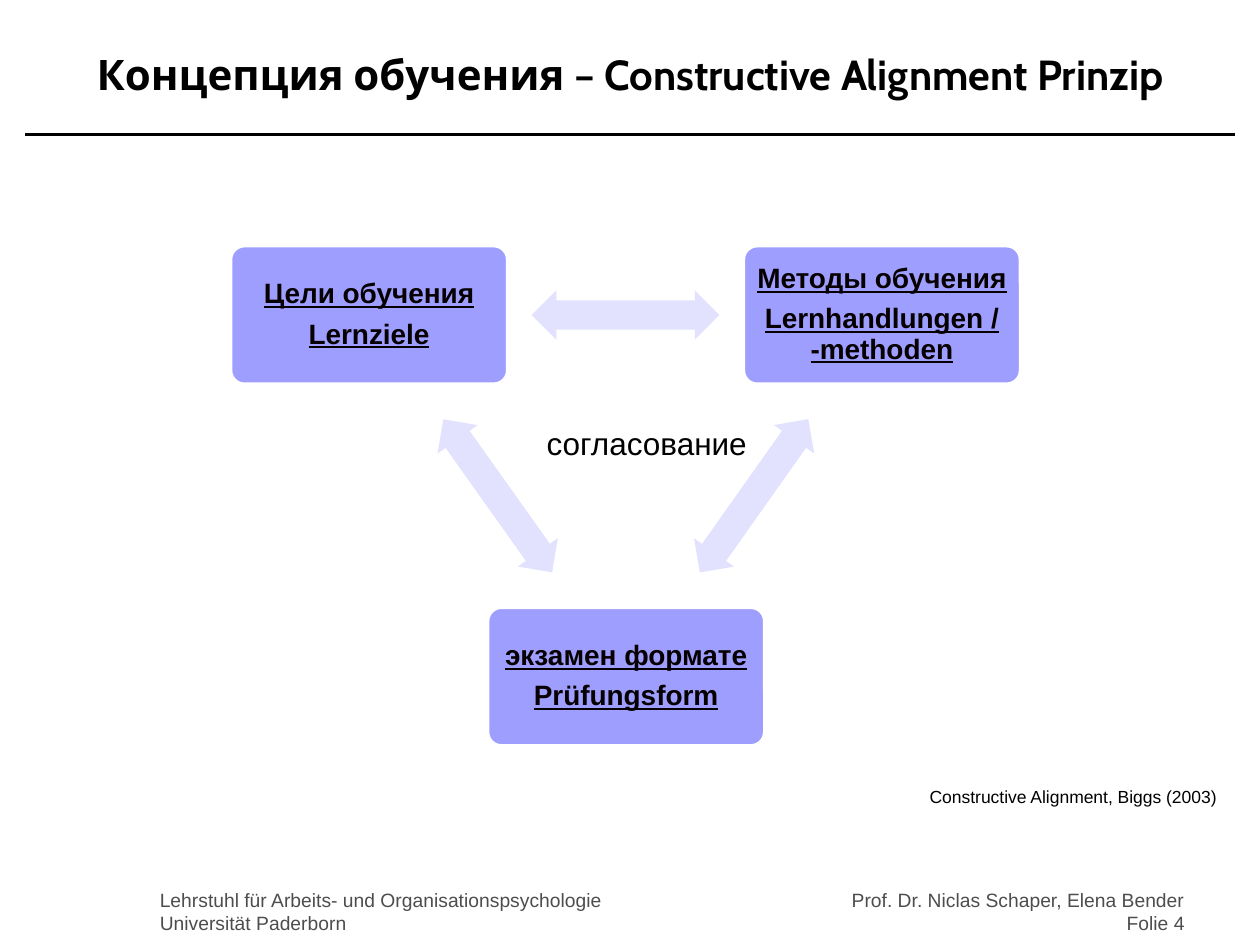
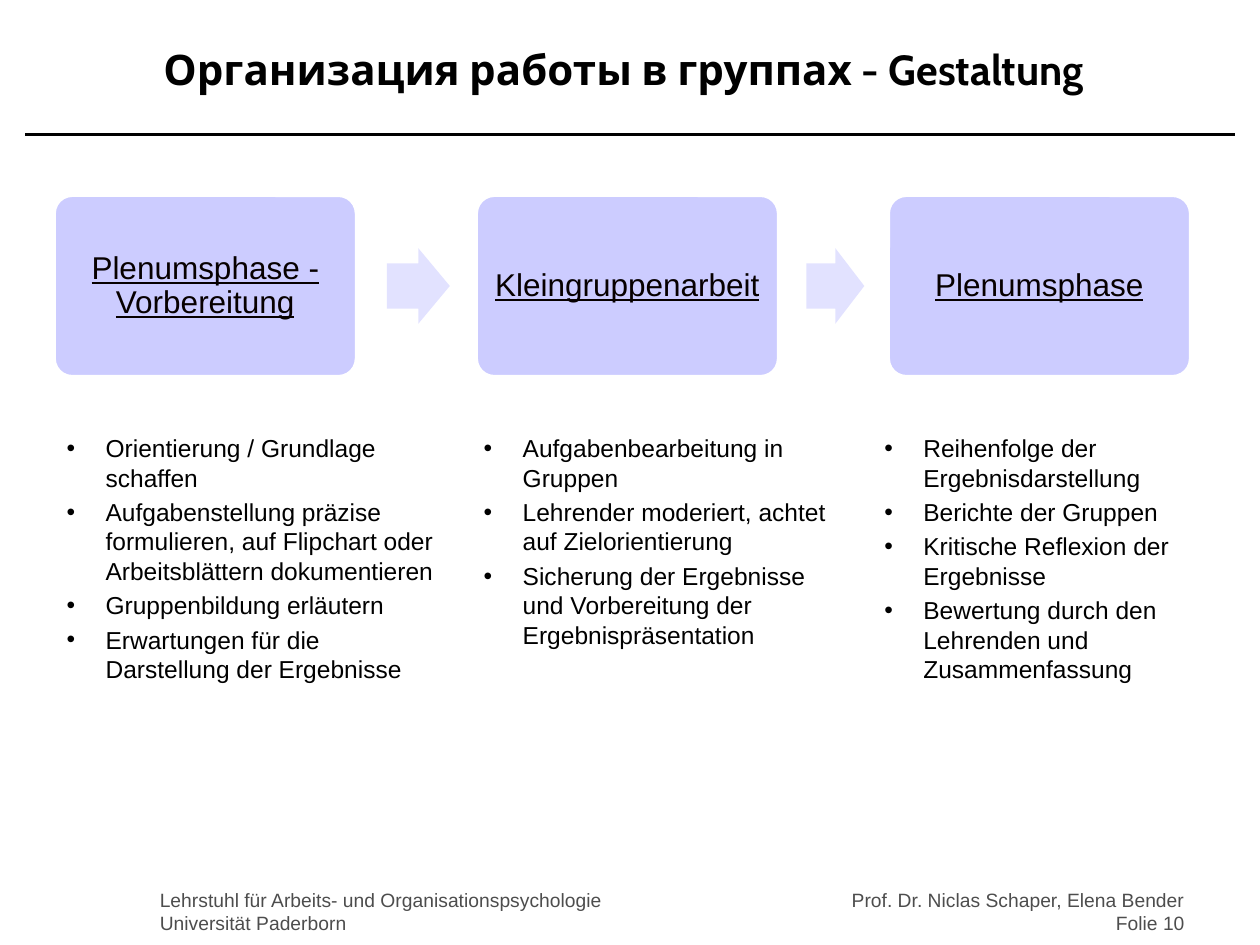
from itertools import combinations
from math import atan2, degrees

from lxml import etree
from pptx import Presentation
from pptx.dml.color import RGBColor
from pptx.enum.shapes import MSO_CONNECTOR, MSO_SHAPE
from pptx.enum.text import MSO_ANCHOR, PP_ALIGN
from pptx.oxml.ns import qn
from pptx.util import Inches, Pt

# Shared look
COLORS = {
    "black": "000000",
    "footer": "4D4D4D",
    "box text": "070000",
    "corner box": "9E9EFF",
    "phase box": "CCCCFF",
    "arrow": "E2E2FF",
    "white": "FFFFFF",
}
BODY_FONT, TITLE_FONT = "Arial", "Cabin"
INSTITUTE = ["Lehrstuhl für Arbeits- und Organisationspsychologie", "Universität Paderborn"]
AUTHORS = "Prof. Dr. Niclas Schaper, Elena Bender"

# Slide 4: three corners of the alignment triangle (left, top, lines)
ALIGNMENT_TITLE = "Концепция обучения – Constructive Alignment Prinzip"
CORNERS = [
    (1.83, 1.95, ["Цели обучения", "Lernziele"]),
    (3.87, 4.82, ["экзамен формате", "Prüfungsform"]),
    (5.9, 1.95, ["Методы обучения", "Lernhandlungen / -methoden"]),
]
CORNER_SIZE = (2.2, 1.1)
LINK_SIZE = (1.49, 0.39)

# Slide 10: phases and their steps
GROUP_TITLE = "Организация работы в группах - Gestaltung"
PHASES = [
    {"name": "Plenumsphase - Vorbereitung", "left": 0.43, "list": (0.43, 3.12),
     "steps": ["Orientierung / Grundlage schaffen",
               "Aufgabenstellung präzise formulieren, auf Flipchart oder "
               "Arbeitsblättern dokumentieren",
               "Gruppenbildung erläutern",
               "Erwartungen für die Darstellung der Ergebnisse"]},
    {"name": "Kleingruppenarbeit", "left": 3.78, "list": (3.74, 2.99),
     "steps": ["Aufgabenbearbeitung in Gruppen",
               "Lehrender moderiert, achtet auf Zielorientierung",
               "Sicherung der Ergebnisse und Vorbereitung der Ergebnispräsentation"]},
    {"name": "Plenumsphase", "left": 7.05, "list": (6.92, 3.05),
     "steps": ["Reihenfolge der Ergebnisdarstellung",
               "Berichte der Gruppen",
               "Kritische Reflexion der Ergebnisse",
               "Bewertung durch den Lehrenden und Zusammenfassung"]},
]
PHASE_TOP, PHASE_SIZE = 1.55, (2.4, 1.44)
PHASE_ARROWS = [(3.07, 0.5), (6.4, 0.46)]  # left, width
PHASE_ARROW_HEIGHT = 0.6
STEPS_TOP, STEPS_HEIGHT, STEP_INDENT = 3.39, 2.13, 0.31


def color(name):
    return RGBColor.from_string(COLORS[name])


def add_bullet(para):
    properties = para._p.get_or_add_pPr()
    properties.set("marL", str(Inches(STEP_INDENT)))
    properties.set("indent", str(-Inches(STEP_INDENT)))
    etree.SubElement(properties, qn("a:buFont")).set("typeface", BODY_FONT)
    etree.SubElement(properties, qn("a:buChar")).set("char", "•")


def write(frame, lines, size, ink="black", font=BODY_FONT, align=PP_ALIGN.LEFT,
          bold=False, underline=False, gap=0, spacing=None, bullets=False):
    """Fill a text frame with one paragraph per line."""
    frame.text = "\n".join(lines)
    for number, para in enumerate(frame.paragraphs):
        para.alignment = align
        if spacing:
            para.line_spacing = spacing
        if number and gap:
            para.space_before = Pt(gap)
        if bullets:
            add_bullet(para)
        for span in para.runs:
            span.font.name = font
            span.font.size = Pt(size)
            span.font.bold = bold
            span.font.underline = underline
            span.font.color.rgb = color(ink)


def add_text(page, place, lines, size, wrap=True, anchor=MSO_ANCHOR.TOP, **style):
    box = page.shapes.add_textbox(*map(Inches, place))
    box.text_frame.word_wrap = wrap
    box.text_frame.vertical_anchor = anchor
    write(box.text_frame, lines, size, **style)


def add_filled(page, kind, place, fill, adjustments):
    shape = page.shapes.add_shape(kind, *map(Inches, place))
    shape.shadow.inherit = False
    shape.fill.solid()
    shape.fill.fore_color.rgb = color(fill)
    shape.line.fill.background()
    for number, value in enumerate(adjustments):
        shape.adjustments[number] = value
    return shape


def add_box(page, place, fill, lines, size, bold=False):
    box = add_filled(page, MSO_SHAPE.ROUNDED_RECTANGLE, place, fill, [0.1])
    box.line.color.rgb = color("white")
    box.line.width = Pt(2)
    frame = box.text_frame
    frame.word_wrap = True
    frame.vertical_anchor = MSO_ANCHOR.MIDDLE
    frame.margin_left = frame.margin_right = Inches(0.07)
    frame.margin_top = frame.margin_bottom = Inches(0.07)
    write(frame, lines, size, ink="box text", align=PP_ALIGN.CENTER,
          bold=bold, underline=True, gap=0.35 * size, spacing=0.9)


def add_page(deck, title, title_place, number):
    """Blank page with title, rule and both footers."""
    page = deck.slides.add_slide(deck.slide_layouts[6])
    add_text(page, title_place, [title], 24, font=TITLE_FONT, bold=True,
             align=PP_ALIGN.CENTER, anchor=MSO_ANCHOR.MIDDLE)
    rule = page.shapes.add_connector(
        MSO_CONNECTOR.STRAIGHT, Inches(0.2), Inches(1.07), Inches(9.8), Inches(1.07))
    rule.line.color.rgb = color("black")
    rule.line.width = Pt(1.5)
    etree.SubElement(rule._element.spPr, qn("a:effectLst"))
    add_text(page, (1.17, 7, 4.33, 0.5), INSTITUTE, 11, ink="footer")
    add_text(page, (5.08, 7, 4.42, 0.5), [AUTHORS, f"Folie {number}"], 11,
             ink="footer", align=PP_ALIGN.RIGHT)
    return page


def build_alignment(deck):
    page = add_page(deck, ALIGNMENT_TITLE, (0, 0.17, 10, 0.83), 4)
    width, height = CORNER_SIZE
    for left, top, lines in CORNERS:
        add_box(page, (left, top, width, height), "corner box", lines, 16, bold=True)

    # Each double arrow sits midway between two corners and points at both
    length, thickness = LINK_SIZE
    for (left_a, top_a, _), (left_b, top_b, _) in combinations(CORNERS, 2):
        center_x = (left_a + left_b + width) / 2
        center_y = (top_a + top_b + height) / 2
        place = (center_x - length / 2, center_y - thickness / 2, length, thickness)
        link = add_filled(page, MSO_SHAPE.LEFT_RIGHT_ARROW, place, "arrow", [0.6, 0.5])
        link.rotation = degrees(atan2(top_b - top_a, left_b - left_a))

    add_text(page, (7.28, 6.19, 2.51, 0.27), ["Constructive Alignment, Biggs (2003)"],
             10, wrap=False)
    add_text(page, (4.24, 3.32, 1.8, 0.4), ["согласование"], 18, wrap=False)


def build_group_work(deck):
    page = add_page(deck, GROUP_TITLE, (0.45, 0.13, 9, 0.83), 10)
    for phase in PHASES:
        add_box(page, (phase["left"], PHASE_TOP, *PHASE_SIZE), "phase box",
                [phase["name"]], 18)
        left, width = phase["list"]
        add_text(page, (left, STEPS_TOP, width, STEPS_HEIGHT), phase["steps"], 14,
                 gap=2.8, bullets=True)
    arrow_top = PHASE_TOP + (PHASE_SIZE[1] - PHASE_ARROW_HEIGHT) / 2
    for left, width in PHASE_ARROWS:
        add_filled(page, MSO_SHAPE.RIGHT_ARROW,
                   (left, arrow_top, width, PHASE_ARROW_HEIGHT), "arrow", [0.6, 0.5])


def main():
    deck = Presentation()
    deck.slide_width, deck.slide_height = Inches(10), Inches(7.5)
    build_alignment(deck)
    build_group_work(deck)
    deck.save("out.pptx")


if __name__ == "__main__":
    main()
